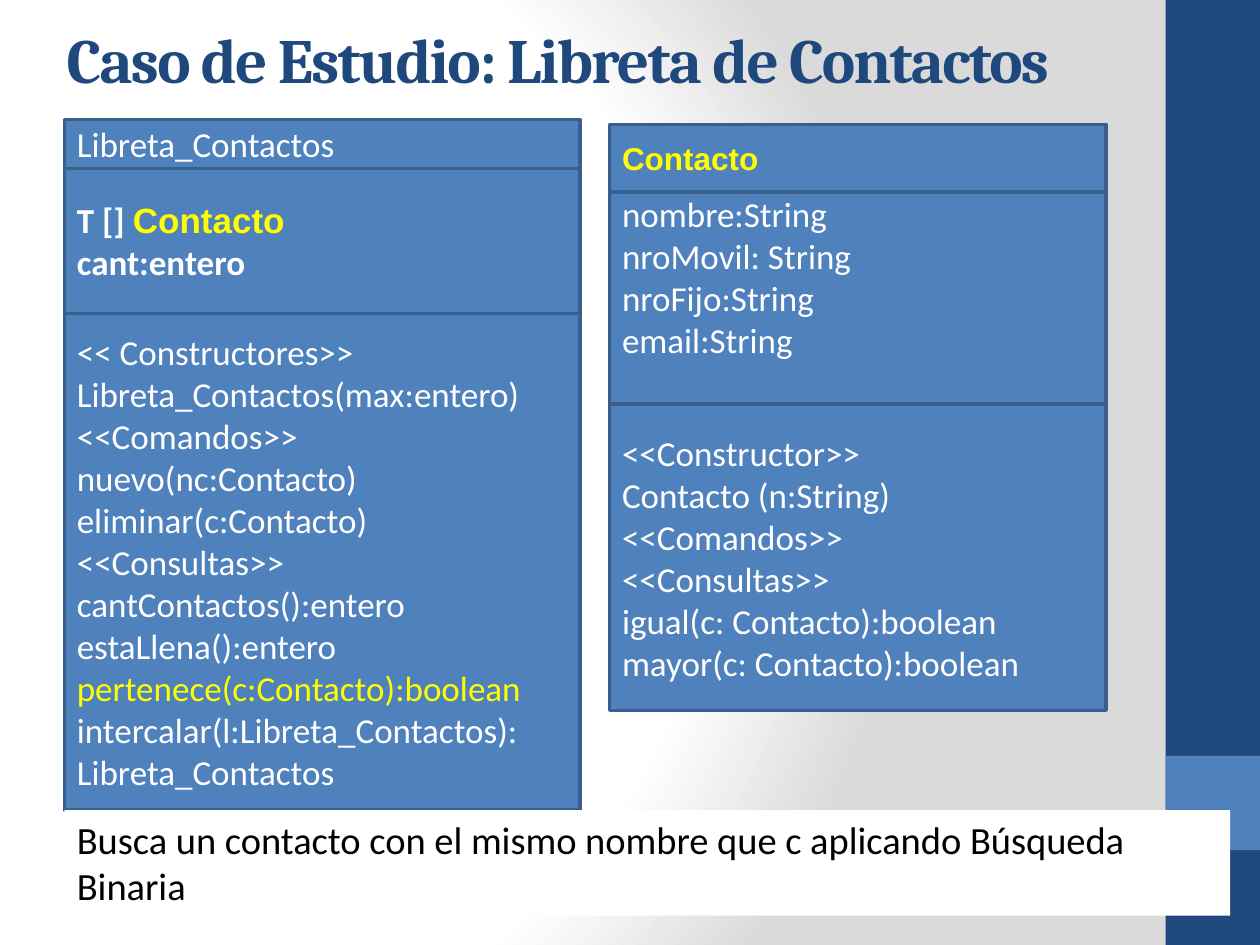
from dataclasses import dataclass

from pptx import Presentation
from pptx.dml.color import RGBColor
from pptx.enum.shapes import MSO_SHAPE
from pptx.enum.text import MSO_ANCHOR, MSO_AUTO_SIZE, PP_ALIGN
from pptx.oxml import parse_xml
from pptx.oxml.ns import nsdecls
from pptx.util import Cm, Pt

RECT = MSO_SHAPE.RECTANGLE
MIDDLE, TOP, BOTTOM = MSO_ANCHOR.MIDDLE, MSO_ANCHOR.TOP, MSO_ANCHOR.BOTTOM
LEFT = PP_ALIGN.LEFT
NO_FIT, GROW = MSO_AUTO_SIZE.NONE, MSO_AUTO_SIZE.SHAPE_TO_FIT_TEXT

COLORS = {
    "navy": "1F497D", "blue": "4F81BD", "edge": "3A5F8C", "white": "FFFFFF",
    "gray": "DADADA", "yellow": "FFFF00", "black": "000000",
}


@dataclass
class Span:
    text: str
    color: str = "white"
    bold: bool = False
    font: str = "Calibri"
    size: int = 20


@dataclass
class Row:
    """One compartment of a class box; a plain string is a plain line."""
    height: float
    lines: list
    bottom: float = 0.13


@dataclass
class Group:
    left: float
    top: float
    width: float
    rows: list[Row]


GROUPS = [
    Group(1.3, 2.41, 10.39, [
        Row(0.99, ["Libreta_Contactos"]),
        Row(2.92, [
            [Span("T [] ", bold=True), Span("Contacto", "yellow", True, "Arial")],
            [Span("cant:entero", bold=True)],
        ]),
        Row(10.01, [
            "<< Constructores>>", "Libreta_Contactos(max:entero)",
            "<<Comandos>>", "nuevo(nc:Contacto)", "eliminar(c:Contacto)",
            "<<Consultas>>", "cantContactos():entero", "estaLlena():entero",
            [Span("pertenece(c:Contacto):boolean", "yellow")],
            "intercalar(l:Libreta_Contactos):", "Libreta_Contactos",
        ]),
    ]),
    Group(12.29, 2.51, 10.01, [
        Row(1.36, [[Span("Contacto", "yellow", True, "Arial", 18)]]),
        Row(4.28, ["nombre:String", "nroMovil: String", "nroFijo:String",
                   "email:String"], bottom=0.99),
        Row(6.17, ["<<Constructor>>", "Contacto (n:String)", "<<Comandos>>",
                   "<<Consultas>>", "igual(c: Contacto):boolean",
                   "mayor(c: Contacto):boolean"]),
    ]),
]


def rgb(name: str) -> RGBColor:
    return RGBColor.from_string(COLORS[name])


def style(run, span: Span) -> None:
    font = run.font
    font.name, font.size, font.bold = span.font, Pt(span.size), span.bold
    font.color.rgb = rgb(span.color)


def write(frame, lines: list, anchor) -> None:
    frame.word_wrap = True
    frame.vertical_anchor = anchor
    for i, line in enumerate(lines):
        para = frame.add_paragraph() if i else frame.paragraphs[0]
        para.alignment = LEFT
        for span in [Span(line)] if isinstance(line, str) else line:
            run = para.add_run()
            run.text = span.text
            style(run, span)


def add_rect(slide, left: float, top: float, width: float, height: float,
             fill: str, edge: str = ""):
    box = slide.shapes.add_shape(RECT, Cm(left), Cm(top), Cm(width), Cm(height))
    box.shadow.inherit = False
    box.fill.solid()
    box.fill.fore_color.rgb = rgb(fill)
    if edge:
        box.line.color.rgb = rgb(edge)
        box.line.width = Pt(2)
    else:
        box.line.fill.background()
    return box


def add_group(slide, group: Group) -> None:
    """Stack the compartments of one class from the top down."""
    top = group.top
    for row in group.rows:
        box = add_rect(slide, group.left, top, group.width, row.height,
                       "blue", "edge")
        write(box.text_frame, row.lines, MIDDLE)
        box.text_frame.margin_bottom = Cm(row.bottom)
        top += row.height


def set_back(slide) -> None:
    """Fill the background with a radial gradient from white to gray."""
    stops = "".join(
        f'<a:gs pos="{pos * 1000}"><a:srgbClr val="{COLORS[name]}"/></a:gs>'
        for pos, name in [(0, "white"), (75, "white"), (100, "gray")])
    slide.element.cSld.insert(0, parse_xml(
        f'<p:bg {nsdecls("p", "a")}><p:bgPr><a:gradFill rotWithShape="1">'
        f'<a:gsLst>{stops}</a:gsLst><a:path path="circle">'
        '<a:fillToRect l="20000" t="50000" r="100000" b="50000"/></a:path>'
        '</a:gradFill><a:effectLst/></p:bgPr></p:bg>'))


def add_title(slide) -> None:
    title = slide.shapes.title
    title.left, title.top = Cm(1.09), Cm(0.13)
    title.width, title.height = Cm(20.96), Cm(1.93)
    span = Span("Caso de Estudio: Libreta de Contactos", "navy", True,
                "Cambria", 36)
    write(title.text_frame, [[span]], BOTTOM)
    title.text_frame.auto_size = NO_FIT
    run = title.text_frame.paragraphs[0].runs[0]
    run.font._element.set("spc", "-100")


def add_note(slide) -> None:
    note = add_rect(slide, 1.3, 16.33, 23.5, 2.13, "white")
    span = Span("Busca un contacto con el mismo nombre que c aplicando "
                "Búsqueda Binaria", "black", size=22)
    write(note.text_frame, [[span]], TOP)
    note.text_frame.auto_size = GROW
    note.text_frame.paragraphs[0].space_before = Pt(6)


def main() -> None:
    deck = Presentation()
    deck.slide_width, deck.slide_height = Cm(25.4), Cm(19.05)
    slide = deck.slides.add_slide(deck.slide_layouts[5])
    set_back(slide)
    add_rect(slide, 23.5, 0, 1.9, 19.05, "navy")
    add_rect(slide, 23.5, 15.24, 1.9, 1.9, "blue")
    add_title(slide)
    for group in GROUPS:
        add_group(slide, group)
    add_note(slide)
    deck.save("out.pptx")


if __name__ == "__main__":
    main()
